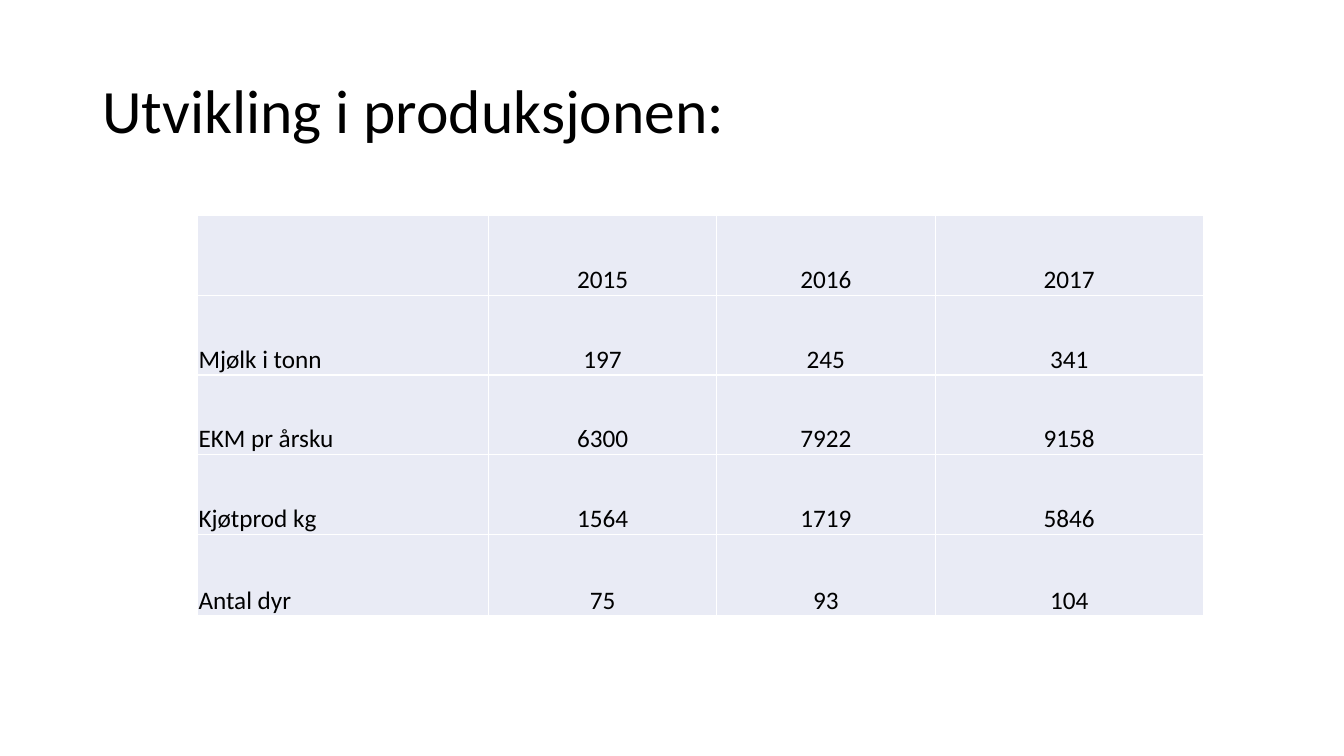
from lxml.etree import SubElement as Sub
from pptx import Presentation
from pptx.dml.color import RGBColor
from pptx.enum.text import MSO_ANCHOR as Anchor, PP_ALIGN as Align
from pptx.oxml.ns import qn
from pptx.util import Pt

FONT = "Calibri"
INK, PALE, WHITE = "000000", "E9EBF5", "FFFFFF"
COLS = [208, 162.7, 156.2, 191.5]
ROWS = [56.9] * 4 + [58.3]
DATA = [
    ["", "2015", "2016", "2017"],
    ["Mjølk i tonn", "197", "245", "341"],
    ["EKM pr årsku", "6300", "7922", "9158"],
    ["Kjøtprod kg", "1564", "1719", "5846"],
    ["Antal dyr", "75", "93", "104"],
]


def color(code):
    """Turn a hex string into a colour."""
    return RGBColor.from_string(code)


def write(para, text, size):
    """Add one run of text to a paragraph."""
    run = para.add_run()
    run.text = text
    run.font.name = FONT
    run.font.size = Pt(size)
    run.font.color.rgb = color(INK)


def border(cell, code, width):
    """Draw a solid line on all four sides of a cell."""
    props = cell._tc.get_or_add_tcPr()
    for side in ("a:lnL", "a:lnR", "a:lnT", "a:lnB"):
        line = Sub(props, qn(side), w=str(Pt(width)))
        Sub(Sub(line, qn("a:solidFill")), qn("a:srgbClr"), val=code)


def title(slide, left, top, width, height):
    """Place the heading in its box."""
    box = slide.shapes.add_textbox(Pt(left), Pt(top), Pt(width), Pt(height))
    frame = box.text_frame
    frame.word_wrap = True
    frame.vertical_anchor = Anchor.MIDDLE
    para = frame.paragraphs[0]
    para.line_spacing = 0.9
    write(para, "Utvikling i produksjonen:", 44)


def style(cell, text, align):
    """Fill, frame and label one cell."""
    border(cell, WHITE, 1)
    cell.fill.solid()
    cell.fill.fore_color.rgb = color(PALE)
    cell.vertical_anchor = Anchor.BOTTOM
    cell.margin_left = cell.margin_right = cell.margin_top = Pt(0.7)
    cell.margin_bottom = 0
    para = cell.text_frame.paragraphs[0]
    para.alignment = align
    if text:
        write(para, text, 18)


def figures(slide, left, top):
    """Place the table of yearly figures from its top left corner."""
    table = slide.shapes.add_table(
        len(ROWS), len(COLS), Pt(left), Pt(top), Pt(sum(COLS)), Pt(sum(ROWS))
    ).table
    table.first_row = table.horz_banding = False
    for col, width in zip(table.columns, COLS):
        col.width = Pt(width)
    for row, height, texts in zip(table.rows, ROWS, DATA):
        row.height = Pt(height)
        for spot, (cell, text) in enumerate(zip(row.cells, texts)):
            style(cell, text, Align.CENTER if spot else Align.LEFT)


def main():
    """Build the slide and save it."""
    deck = Presentation()
    deck.slide_width, deck.slide_height = Pt(960), Pt(540)
    slide = deck.slides.add_slide(deck.slide_layouts[6])
    title(slide, 66, 28.8, 828, 104.4)
    figures(slide, 141.1, 154.1)
    deck.save("out.pptx")


if __name__ == "__main__":
    main()
